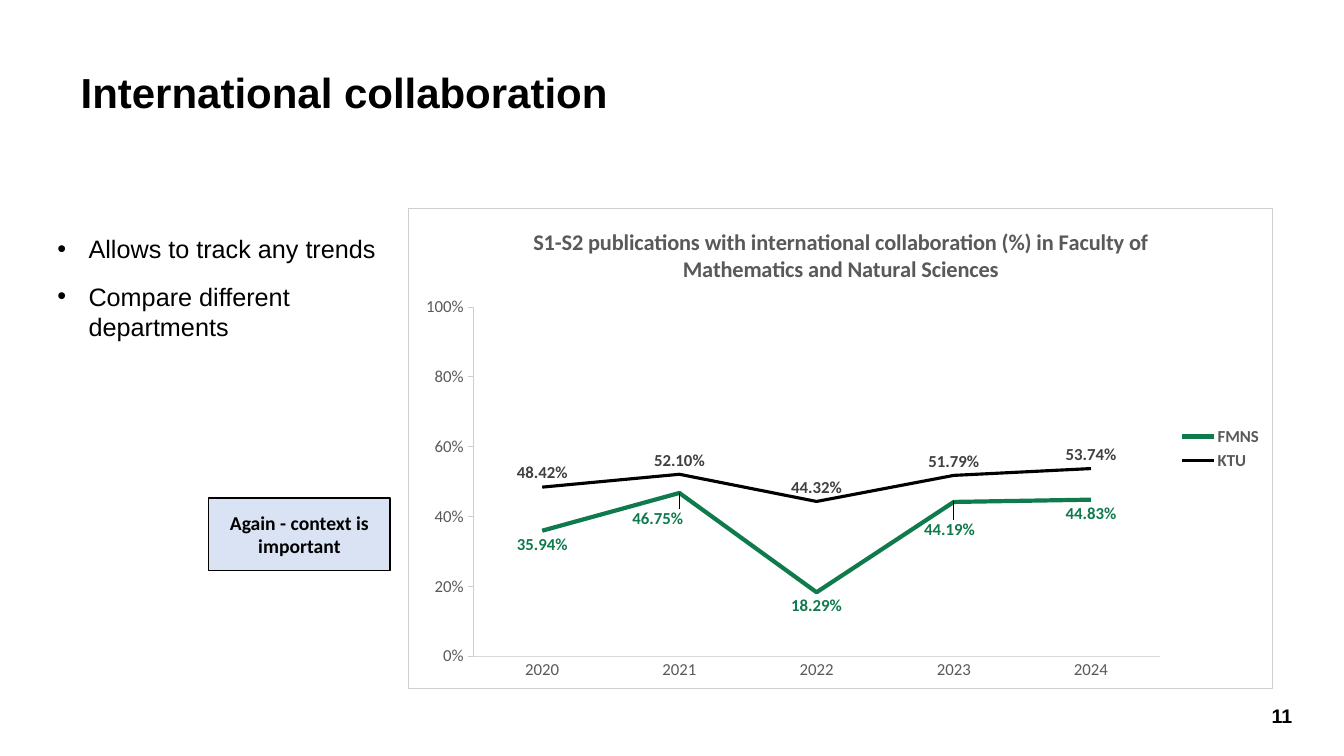
from lxml import etree
from pptx import Presentation
from pptx.chart.data import CategoryChartData
from pptx.dml.color import RGBColor
from pptx.enum.chart import XL_CHART_TYPE, XL_LABEL_POSITION, XL_LEGEND_POSITION, XL_TICK_MARK
from pptx.enum.shapes import MSO_SHAPE
from pptx.enum.text import MSO_ANCHOR, PP_ALIGN
from pptx.oxml import parse_xml
from pptx.oxml.ns import nsdecls, qn
from pptx.util import Inches, Pt

COLORS = {
    "black": "000000",
    "green": "0F7B4D",
    "gray": "595959",
    "label": "404040",
    "axis": "D9D9D9",
    "border": "D0CECE",
    "note": "DAE3F3",
}


def style_font(font, name, size, color, bold=False):
    font.name = name
    font.size = Pt(size)
    font.bold = bold
    font.color.rgb = RGBColor.from_string(COLORS[color])


def make_layout(**values):
    layout = parse_xml(f"<c:layout {nsdecls('c')}><c:manualLayout/></c:layout>")
    for tag, value in values.items():
        etree.SubElement(layout[0], qn(f"c:{tag}")).set("val", str(value))
    return layout


deck = Presentation()
deck.slide_width = Inches(13.33)
deck.slide_height = Inches(7.5)
page = deck.slides.add_slide(deck.slide_layouts[5])

title = page.shapes.title
title.left, title.top = Inches(0.7), Inches(0.66)
title.width, title.height = Inches(9.82), Inches(0.56)
para = title.text_frame.paragraphs[0]
para.alignment = PP_ALIGN.LEFT
para.line_spacing = 0.9
span = para.add_run()
span.text = "International collaboration"
style_font(span.font, "Arial", 30, "black", True)

data = CategoryChartData(number_format="0.00%")
data.categories = ["2020", "2021", "2022", "2023", "2024"]
data.add_series("FMNS", [0.3594, 0.4675, 0.1829, 0.4419, 0.4483])
data.add_series("KTU", [0.4842, 0.521, 0.4432, 0.5179, 0.5374])
chart = page.shapes.add_chart(
    XL_CHART_TYPE.LINE, Inches(4.05), Inches(2.06), Inches(8.58), Inches(4.78), data
).chart
style_font(chart.font, "Calibri", 10, "black")
chart._chartSpace.find(qn("c:chart")).addnext(parse_xml(
    f'<c:spPr {nsdecls("c", "a")}><a:noFill/><a:ln w="9525"><a:solidFill>'
    f'<a:srgbClr val="{COLORS["border"]}"/></a:solidFill></a:ln></c:spPr>'
))

chart.has_title = True
span = chart.chart_title.text_frame.paragraphs[0].add_run()
span.text = "S1-S2 publications with international collaboration (%) in Faculty of Mathematics and Natural Sciences"
style_font(span.font, "Calibri", 16, "gray", True)

chart.has_legend = True
chart.legend.position = XL_LEGEND_POSITION.RIGHT
chart.legend.include_in_layout = False
style_font(chart.legend.font, "Calibri", 12, "gray", True)

plot_area = chart._chartSpace.find(".//" + qn("c:plotArea"))
for layout in plot_area.findall(qn("c:layout")):
    plot_area.remove(layout)
plot_area.insert(0, make_layout(
    layoutTarget="inner", xMode="edge", yMode="edge", x=0.075, y=0.206, w=0.794, h=0.726
))

axes = [
    (chart.category_axis, "axis", XL_TICK_MARK.NONE),
    (chart.value_axis, "border", XL_TICK_MARK.OUTSIDE),
]
for axis, color, tick in axes:
    axis.has_major_gridlines = False
    axis.major_tick_mark = tick
    axis.minor_tick_mark = XL_TICK_MARK.NONE
    axis.format.line.width = Pt(0.75)
    axis.format.line.color.rgb = RGBColor.from_string(COLORS[color])
    style_font(axis.tick_labels.font, "Calibri", 12, "gray")
chart.value_axis.minimum_scale = 0
chart.value_axis.maximum_scale = 1
chart.value_axis.major_unit = 0.2
chart.value_axis.tick_labels.number_format = "0%"
chart.value_axis.tick_labels.number_format_is_linked = False

plot = chart.plots[0]
plot.vary_by_categories = False
series_styles = [
    ("green", 3, "green", XL_LABEL_POSITION.BELOW),
    ("black", 2.25, "label", XL_LABEL_POSITION.ABOVE),
]
for series, (color, width, label_color, position) in zip(plot.series, series_styles):
    series.smooth = False
    series.format.line.width = Pt(width)
    series.format.line.color.rgb = RGBColor.from_string(COLORS[color])
    labels = series.data_labels
    labels.show_value = True
    labels.number_format = "0.00%"
    labels.number_format_is_linked = False
    labels.position = position
    style_font(labels.font, "Calibri", 12, label_color, True)

for index, x, y in [(1, -0.025, 0.025), (3, -0.005, 0.028)]:
    label = plot.series[0].points[index].data_label
    style_font(label.font, "Calibri", 12, "green", True)
    label.position = XL_LABEL_POSITION.BELOW
    element = plot.series[0].data_labels._element.xpath(f'c:dLbl[c:idx/@val="{index}"]')[0]
    element.find(qn("c:idx")).addnext(make_layout(x=x, y=y))

note = page.shapes.add_shape(
    MSO_SHAPE.RECTANGLE, Inches(2.07), Inches(4.94), Inches(1.8), Inches(0.72)
)
note.shadow.inherit = False
note.fill.solid()
note.fill.fore_color.rgb = RGBColor.from_string(COLORS["note"])
note.line.color.rgb = RGBColor.from_string(COLORS["black"])
note.line.width = Pt(1)
note.text_frame.word_wrap = True
note.text_frame.vertical_anchor = MSO_ANCHOR.MIDDLE
para = note.text_frame.paragraphs[0]
para.alignment = PP_ALIGN.CENTER
span = para.add_run()
span.text = "Again - context is important"
style_font(span.font, "Calibri", 14, "black", True)

box = page.shapes.add_textbox(Inches(0.47), Inches(2.27), Inches(3.39), Inches(1.18))
frame = box.text_frame
frame.word_wrap = True
for index, text in enumerate(["Allows to track any trends", "Compare different departments"]):
    para = frame.add_paragraph() if index else frame.paragraphs[0]
    properties = para._p.get_or_add_pPr()
    properties.set("marL", str(Inches(0.31)))
    properties.set("indent", str(Inches(-0.31)))
    etree.SubElement(properties, qn("a:buFont")).set("typeface", "Arial")
    etree.SubElement(properties, qn("a:buChar")).set("char", "•")
    para.space_before = Pt(6 if index else 0)
    para.space_after = Pt(6)
    span = para.add_run()
    span.text = text
    style_font(span.font, "Arial", 18, "black")

number = page.shapes.add_textbox(Inches(12.21), Inches(6.87), Inches(1.01), Inches(0.4))
number.text_frame.word_wrap = True
number.text_frame.vertical_anchor = MSO_ANCHOR.BOTTOM
para = number.text_frame.paragraphs[0]
para.alignment = PP_ALIGN.CENTER
span = para.add_run()
span.text = "11"
style_font(span.font, "Arial", 14, "black", True)

deck.save("out.pptx")
